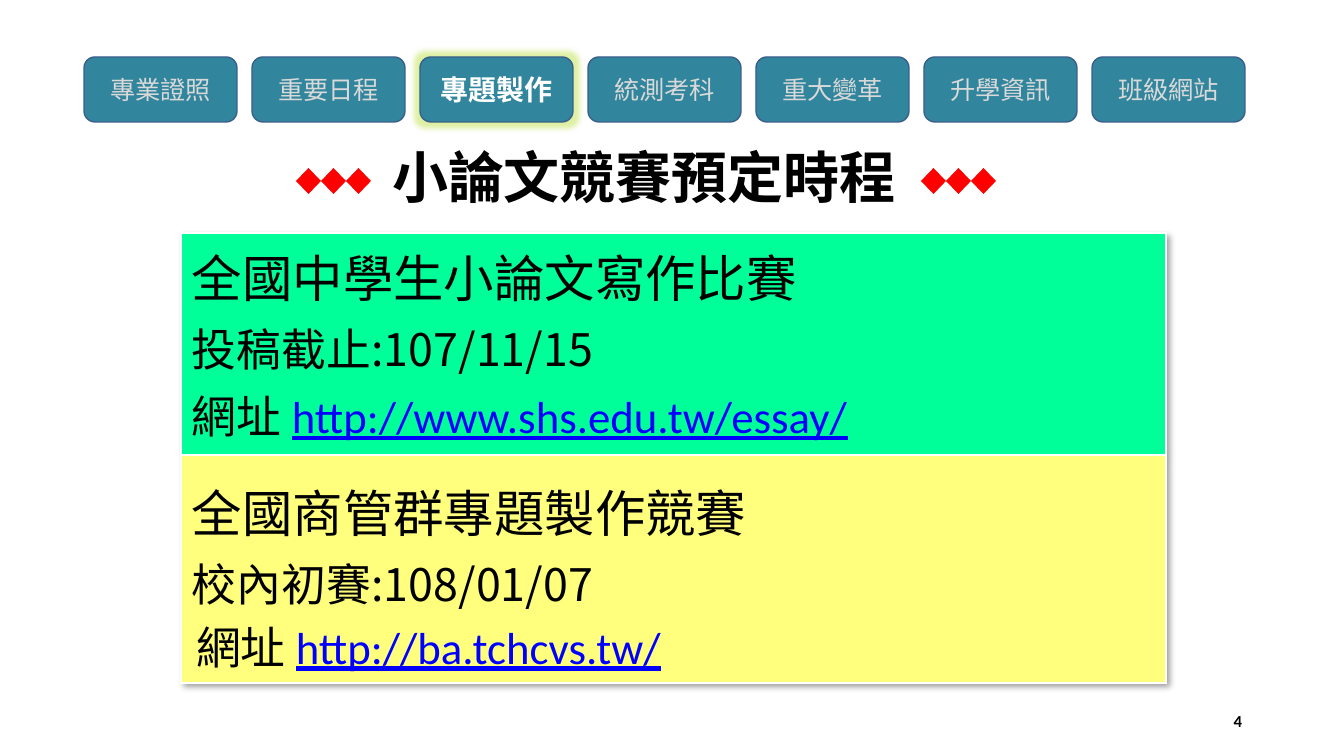
from lxml import etree
from pptx import Presentation
from pptx.dml.color import RGBColor
from pptx.enum.shapes import MSO_SHAPE
from pptx.enum.text import MSO_ANCHOR, MSO_AUTO_SIZE, PP_ALIGN
from pptx.oxml import parse_xml
from pptx.oxml.ns import nsdecls, qn
from pptx.util import Pt

TAB_SHAPE, DIAMOND = MSO_SHAPE.FLOWCHART_ALTERNATE_PROCESS, MSO_SHAPE.DIAMOND
MIDDLE, BOTTOM = MSO_ANCHOR.MIDDLE, MSO_ANCHOR.BOTTOM
LEFT, CENTER, RIGHT, JUSTIFY = PP_ALIGN.LEFT, PP_ALIGN.CENTER, PP_ALIGN.RIGHT, PP_ALIGN.JUSTIFY
FIXED_SIZE = MSO_AUTO_SIZE.NONE

TEAL = RGBColor(0x31, 0x85, 0x9C)
TEAL_EDGE = RGBColor(0x3A, 0x5F, 0x8C)
PALE_GRAY = RGBColor(0xD9, 0xD9, 0xD9)
WHITE = RGBColor(0xFF, 0xFF, 0xFF)
BLACK = RGBColor(0, 0, 0)
RED = RGBColor(0xFF, 0, 0)
LINK_BLUE = RGBColor(0, 0, 0xFF)
GREEN = RGBColor(0, 0xFF, 0x99)
YELLOW = RGBColor(0xFF, 0xFF, 0x7D)
GLOW_LIME = RGBColor(0xC8, 0xE6, 0x64)

LATIN, CJK = "Calibri", "Noto Sans CJK SC"
TITLE_ONLY = 5

TABS = ["專業證照", "重要日程", "專題製作", "統測考科", "重大變革", "升學資訊", "班級網站"]
ACTIVE_TAB = "專題製作"
CONTESTS = [
    dict(name="全國中學生小論文寫作比賽", date="投稿截止:107/11/15",
         url="http://www.shs.edu.tw/essay/", color=GREEN,
         height=222, top=0, url_indent=0, url_spacing=48),
    dict(name="全國商管群專題製作競賽", date="校內初賽:108/01/07",
         url="http://ba.tchcvs.tw/", color=YELLOW,
         height=228, top=16, url_indent=4, url_spacing=45),
]


def px(length):
    """Turn px into EMU at 100.8 px to the inch."""
    return round(length * 914400 / 100.8)


def px_box(*lengths):
    """Turn a px box into EMU."""
    return [px(length) for length in lengths]


def add_text(paragraph, text, size=18, font=LATIN, color=BLACK, bold=False,
             underline=False, align=LEFT):
    """Append a formatted run to a paragraph."""
    paragraph.alignment = align
    run = paragraph.add_run()
    run.text = text
    run.font.size = Pt(size)
    run.font.bold = bold
    run.font.underline = underline
    run.font.color.rgb = color
    run.font.name = font
    etree.SubElement(run.font._element, qn("a:ea")).set("typeface", CJK)


def add_filled(slide, kind, box, color):
    """Add a flat preset shape without outline."""
    shape = slide.shapes.add_shape(kind, *px_box(*box))
    shape.fill.solid()
    shape.fill.fore_color.rgb = color
    shape.line.fill.background()
    shape.shadow.inherit = False
    return shape


def add_glow(shape, color):
    """Surround a shape with a soft glow."""
    effects = shape._element.spPr.find(qn("a:effectLst"))
    effects.append(parse_xml(
        f'<a:glow {nsdecls("a")} rad="101600"><a:srgbClr val="{color}">'
        '<a:alpha val="60000"/></a:srgbClr></a:glow>'))


def add_navigation(slide, left, top, width, height):
    """Draw the row of section tabs."""
    tab_width = 153
    pitch = (width - tab_width) // (len(TABS) - 1)
    for index, label in enumerate(TABS):
        tab = add_filled(slide, TAB_SHAPE, (left + index * pitch, top, tab_width, height), TEAL)
        tab.line.color.rgb = TEAL_EDGE
        tab.line.width = Pt(1)
        tab.text_frame.vertical_anchor = MIDDLE
        style = dict(size=18, color=PALE_GRAY)
        if label == ACTIVE_TAB:
            add_glow(tab, GLOW_LIME)
            style = dict(size=20, font=CJK, color=WHITE, bold=True)
        add_text(tab.text_frame.paragraphs[0], label, align=CENTER, **style)


def add_heading(slide, left, top, width, height):
    """Place the title between two groups of diamonds."""
    title = slide.shapes.title
    title.left, title.top, title.width, title.height = px_box(left, top, width, height)
    frame = title.text_frame
    frame.auto_size = FIXED_SIZE
    frame.vertical_anchor = BOTTOM
    frame.paragraphs[0].line_spacing = 0.9
    add_text(frame.paragraphs[0], "小論文競賽預定時程", size=40, bold=True)
    for group_left in (left - 86, left + width + 10):
        for index in range(3):
            add_filled(slide, DIAMOND, (group_left + index * 25, top + 25, 25, 26), RED)


def add_borders(cell, color):
    """Give a cell thin borders on all sides."""
    for index, side in enumerate("LRTB"):
        cell._tc.get_or_add_tcPr().insert(index, parse_xml(
            f'<a:ln{side} {nsdecls("a")} w="12700"><a:solidFill>'
            f'<a:srgbClr val="{color}"/></a:solidFill></a:ln{side}>'))


def fill_contest(cell, contest):
    """Write one contest into its cell."""
    cell.fill.solid()
    cell.fill.fore_color.rgb = contest["color"]
    add_borders(cell, WHITE)
    cell.vertical_anchor = MIDDLE
    cell.margin_left, cell.margin_top = px(11), px(contest["top"])
    cell.margin_right = cell.margin_bottom = 0
    frame = cell.text_frame
    name, date, address = frame.paragraphs[0], frame.add_paragraph(), frame.add_paragraph()
    name.line_spacing, date.line_spacing = Pt(50), Pt(48)
    address.line_spacing, address.space_after = Pt(contest["url_spacing"]), Pt(6)
    address._p.get_or_add_pPr().set("marL", str(px(contest["url_indent"])))
    add_text(name, contest["name"], size=36, font=CJK, align=JUSTIFY)
    add_text(date, contest["date"], size=32, font=CJK, align=JUSTIFY)
    add_text(address, "網址 ", size=32, font=CJK, align=JUSTIFY)
    add_text(address, contest["url"], size=32, color=LINK_BLUE, underline=True, align=JUSTIFY)


def add_schedule(slide, left, top, width, height):
    """Build the shadowed table of contests."""
    table = slide.shapes.add_table(len(CONTESTS), 1, *px_box(left, top, width, height)).table
    table.first_row = table.horz_banding = False
    table._tbl.tblPr.insert(0, parse_xml(
        f'<a:effectLst {nsdecls("a")}><a:outerShdw blurRad="50800" dist="38100" dir="2700000" '
        'algn="tl"><a:srgbClr val="000000"><a:alpha val="40000"/></a:srgbClr>'
        '</a:outerShdw></a:effectLst>'))
    for index, contest in enumerate(CONTESTS):
        table.rows[index].height = px(contest["height"])
        fill_contest(table.cell(index, 0), contest)


def add_page_number(slide, left, top, width, height):
    """Write the page number at the lower right."""
    frame = slide.shapes.add_textbox(*px_box(left, top, width, height)).text_frame
    frame.word_wrap = True
    frame.vertical_anchor = MIDDLE
    add_text(frame.paragraphs[0], "4", size=12, bold=True, align=RIGHT)


def main():
    """Build and save the slide."""
    deck = Presentation()
    deck.slide_width, deck.slide_height = px_box(1344, 756)
    slide = deck.slides.add_slide(deck.slide_layouts[TITLE_ONLY])
    add_navigation(slide, 84, 57, 1161, 65)
    add_heading(slide, 382, 143, 529, 73)
    add_schedule(slide, 181, 233, 985, 450)
    add_page_number(slide, 950, 701, 302, 40)
    deck.save("out.pptx")


if __name__ == "__main__":
    main()
